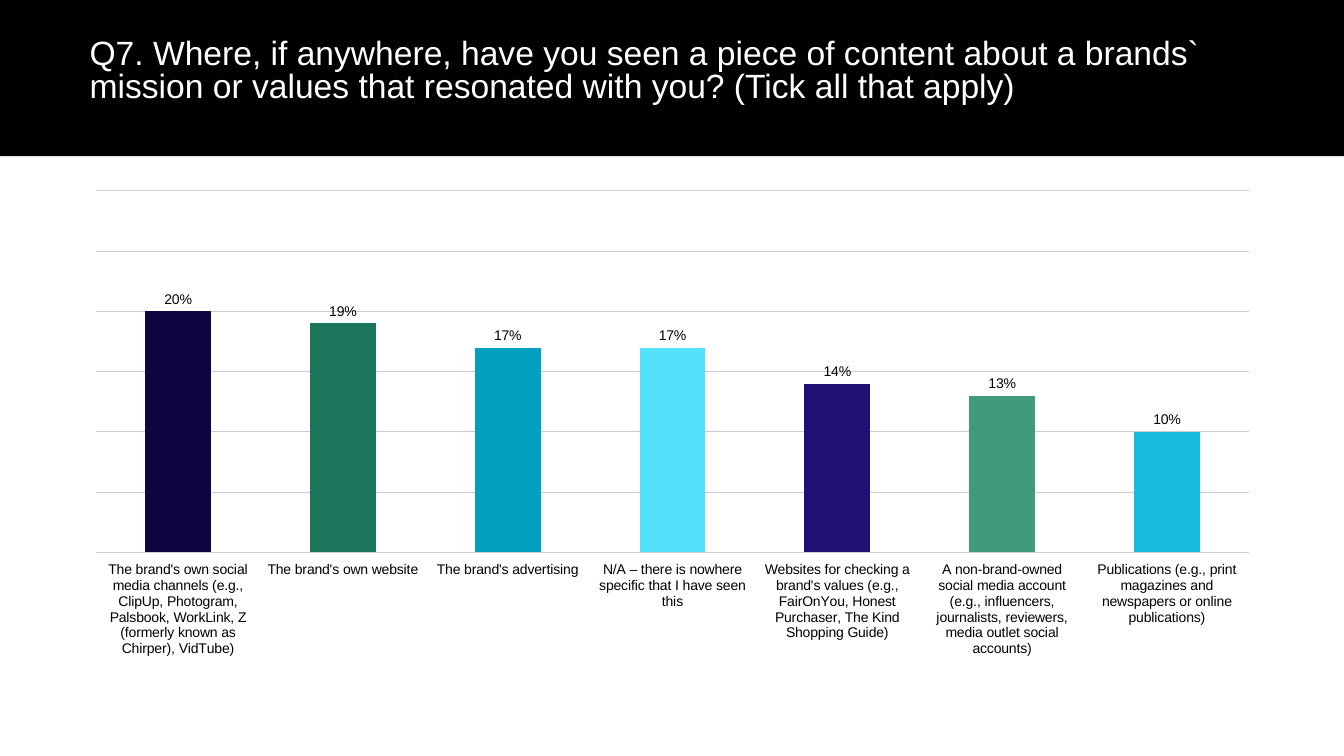
from lxml import etree
from pptx import Presentation
from pptx.chart.data import CategoryChartData
from pptx.dml.color import RGBColor
from pptx.enum.chart import XL_CHART_TYPE, XL_LABEL_POSITION, XL_TICK_LABEL_POSITION, XL_TICK_MARK
from pptx.enum.shapes import MSO_SHAPE
from pptx.enum.text import MSO_ANCHOR, PP_ALIGN
from pptx.oxml.ns import qn
from pptx.util import Inches, Pt

QUESTION = ("Q7. Where, if anywhere, have you seen a piece of content about a brands` "
            "mission or values that resonated with you? (Tick all that apply)")
ANSWERS = [
    ("Publications (e.g., print magazines and newspapers or online publications)", 0.10, "18BBDD"),
    ("A non-brand-owned social media account (e.g., influencers, journalists, reviewers, "
     "media outlet social accounts)", 0.13, "409A7C"),
    ("Websites for checking a brand's values (e.g., FairOnYou, Honest Purchaser, "
     "The Kind Shopping Guide)", 0.14, "211176"),
    ("N/A – there is nowhere specific that I have seen this", 0.17, "52E2FA"),
    ("The brand's advertising", 0.17, "00A0BE"),
    ("The brand's own website", 0.19, "1B755A"),
    ("The brand's own social media channels (e.g., ClipUp, Photogram, Palsbook, WorkLink, "
     "Z (formerly known as Chirper), VidTube)", 0.20, "0F0542"),
]


def rgb(value):
    """Turn a hex string into a colour."""
    return RGBColor.from_string(value)


def style_font(font, size, color, name="Arial"):
    """Set the face, size and colour of a font."""
    font.name = name
    font.size = Pt(size)
    font.color.rgb = rgb(color)


def add_header(slide, left, top, width, height):
    """Draw the black band with the survey question in it."""
    band = slide.shapes.add_shape(MSO_SHAPE.RECTANGLE, Inches(left), Inches(top),
                                  Inches(width), Inches(height))
    band.shadow.inherit = False
    band.fill.solid()
    band.fill.fore_color.rgb = rgb("000000")
    band.line.fill.background()

    box = slide.shapes.add_textbox(Inches(left + 0.79), Inches(top + 0.35),
                                   Inches(width - 1.85), Inches(0.8))
    tf = box.text_frame
    tf.word_wrap = True
    tf.vertical_anchor = MSO_ANCHOR.TOP
    p = tf.paragraphs[0]
    p.text = QUESTION
    p.alignment = PP_ALIGN.LEFT
    p.line_spacing = 0.8
    style_font(p.runs[0].font, 24, "FFFFFF")


def set_plot_area(chart, x, y, w, h):
    """Fix the inner plot area as fractions of the chart."""
    plot_area = chart._chartSpace.chart.plotArea
    for old in plot_area.findall(qn("c:layout")):
        plot_area.remove(old)
    layout = etree.Element(qn("c:layout"))
    manual = etree.SubElement(layout, qn("c:manualLayout"))
    settings = [("layoutTarget", "inner"), ("xMode", "edge"), ("yMode", "edge"),
                ("x", x), ("y", y), ("w", w), ("h", h)]
    for tag, value in settings:
        etree.SubElement(manual, qn(f"c:{tag}")).set("val", str(value))
    plot_area.insert(0, layout)


def add_answer_chart(slide, left, top, width, height):
    """Draw the column chart of answers, largest share on the left."""
    data = CategoryChartData(number_format="0%")
    data.categories = [label for label, _, _ in ANSWERS]
    data.add_series("Series 1", [share for _, share, _ in ANSWERS])
    chart = slide.shapes.add_chart(XL_CHART_TYPE.COLUMN_CLUSTERED, Inches(left), Inches(top),
                                   Inches(width), Inches(height), data).chart
    chart.has_legend = False
    chart.has_title = False
    style_font(chart.font, 12, "000000", "Calibri")
    set_plot_area(chart, 0.02, 0.02, 0.96, 0.75)

    answers = chart.category_axis
    answers.reverse_order = True
    answers.tick_label_position = XL_TICK_LABEL_POSITION.LOW
    answers.major_tick_mark = XL_TICK_MARK.NONE
    answers.format.line.fill.background()
    style_font(answers.tick_labels.font, 10, "000000")

    shares = chart.value_axis
    shares.visible = False
    shares.minimum_scale = 0
    shares.maximum_scale = 0.3
    shares.major_unit = 0.05
    shares.has_major_gridlines = True
    grid = shares.major_gridlines.format.line
    grid.color.rgb = rgb("CCCCCC")
    grid.width = Pt(0.75)

    plot = chart.plots[0]
    plot.gap_width = 150
    plot.vary_by_categories = False
    series = plot.series[0]
    for i, (_, _, color) in enumerate(ANSWERS):
        fill = series.points[i].format.fill
        fill.solid()
        fill.fore_color.rgb = rgb(color)
    labels = series.data_labels
    labels.show_value = True
    labels.number_format = "0%"
    labels.number_format_is_linked = False
    labels.position = XL_LABEL_POSITION.OUTSIDE_END
    style_font(labels.font, 10, "000000")


def main():
    """Build the survey slide and save it."""
    prs = Presentation()
    prs.slide_width = Inches(13.33)
    prs.slide_height = Inches(7.5)
    slide = prs.slides.add_slide(prs.slide_layouts[6])
    add_header(slide, 0, 0, 13.33, 1.55)
    add_answer_chart(slide, 0.71, 1.8, 11.92, 4.78)
    prs.save("out.pptx")


if __name__ == "__main__":
    main()
